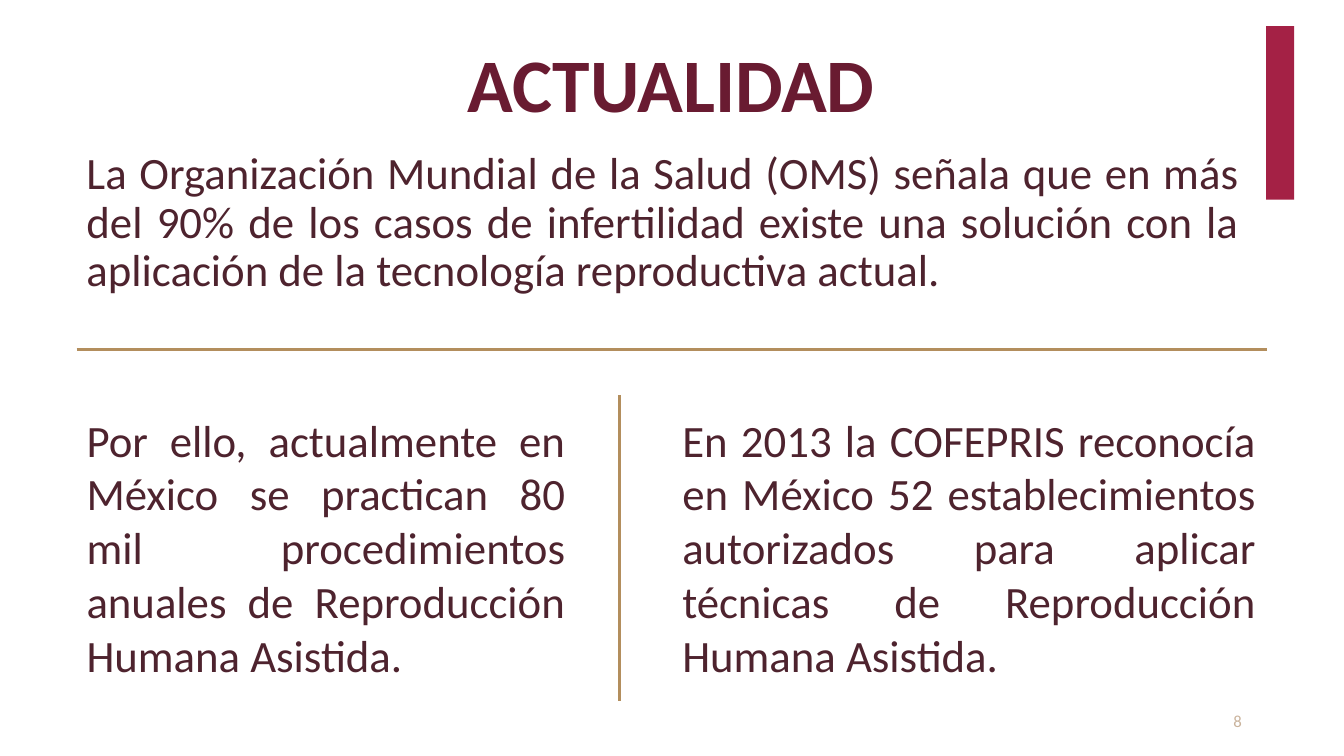
"""Build the slide ACTUALIDAD with three statements split by gold rules."""
from lxml import etree
from pptx import Presentation
from pptx.dml.color import RGBColor
from pptx.enum.shapes import MSO_CONNECTOR, MSO_SHAPE
from pptx.enum.text import MSO_ANCHOR, PP_ALIGN
from pptx.oxml.ns import qn
from pptx.util import Pt

LINE = MSO_CONNECTOR.STRAIGHT
RECT = MSO_SHAPE.RECTANGLE
TOP, MIDDLE = MSO_ANCHOR.TOP, MSO_ANCHOR.MIDDLE
CENTER, RIGHT, JUSTIFY = PP_ALIGN.CENTER, PP_ALIGN.RIGHT, PP_ALIGN.JUSTIFY

FONT = "Calibri"
CRIMSON, WINE, BODY, GOLD, SAND = "A42145", "691B31", "4E232E", "B38E5D", "CAB39C"

TITLE = "ACTUALIDAD"
INTRO = ("La Organización Mundial de la Salud (OMS) señala que en más del 90% de los casos "
         "de infertilidad existe una solución con la aplicación de la tecnología "
         "reproductiva actual.")
COLUMNS = [
    (54.72, 356.4, "Por ello, actualmente en México se practican 80 mil procedimientos "
                   "anuales de Reproducción Humana Asistida."),
    (480.24, 424.08, "En 2013 la COFEPRIS reconocía en México 52 establecimientos autorizados "
                     "para aplicar técnicas de Reproducción Humana Asistida."),
]
PAGE = "8"

LEFT, EDGE = 54.72, 904.68
RULES = [(LEFT, 249.84, EDGE, 249.84), (442.8, 282.24, 442.8, 500.4)]


def rgb(color):
    return RGBColor.from_string(color)


def add_text(s, text, x, y, w, h, size=32, color=BODY, align=JUSTIFY,
             bold=False, anchor=TOP, spacing=1.0):
    tf = s.shapes.add_textbox(Pt(x), Pt(y), Pt(w), Pt(h)).text_frame
    tf.word_wrap = True
    tf.vertical_anchor = anchor
    p = tf.paragraphs[0]
    p.alignment = align
    p.line_spacing = spacing
    r = p.add_run()
    r.text = text
    r.font.name = FONT
    r.font.size = Pt(size)
    r.font.bold = bold
    r.font.color.rgb = rgb(color)


def add_rule(s, x1, y1, x2, y2):
    rule = s.shapes.add_connector(LINE, Pt(x1), Pt(y1), Pt(x2), Pt(y2))
    rule.line.color.rgb = rgb(GOLD)
    rule.line.width = Pt(2.25)
    etree.SubElement(rule._element.spPr, qn("a:effectLst"))


def main():
    prs = Presentation()
    prs.slide_width, prs.slide_height = Pt(960), Pt(540)
    s = prs.slides.add_slide(prs.slide_layouts[6])

    bar = s.shapes.add_shape(RECT, Pt(904.32), Pt(18.72), Pt(20.16), Pt(123.84))
    bar.shadow.inherit = False
    bar.fill.solid()
    bar.fill.fore_color.rgb = rgb(CRIMSON)
    bar.line.fill.background()

    add_text(s, TITLE, LEFT, 23.04, 849.6, 68.4, size=54, color=WINE, align=CENTER, bold=True)
    add_text(s, INTRO, LEFT, 104.4, 838.08, 115.92, spacing=0.9)
    for x, w, text in COLUMNS:
        add_text(s, text, x, 290.88, w, 200.88)
    for rule in RULES:
        add_rule(s, *rule)
    add_text(s, PAGE, 678.24, 500.4, 216, 28.8, size=12, color=SAND, align=RIGHT, anchor=MIDDLE)

    prs.save("out.pptx")


if __name__ == "__main__":
    main()
